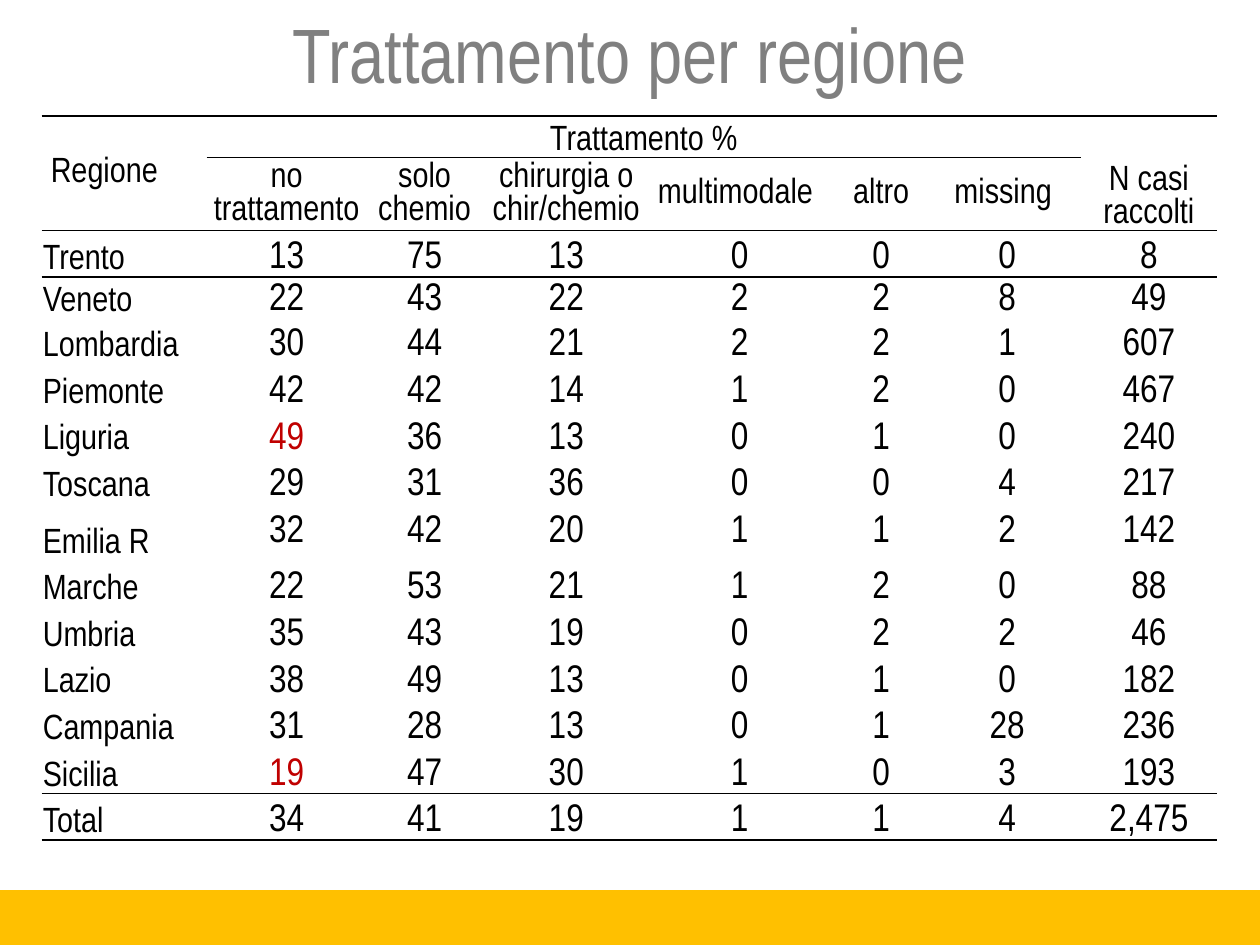
from lxml.etree import SubElement
from pptx import Presentation
from pptx.dml.color import RGBColor
from pptx.enum.shapes import MSO_SHAPE
from pptx.enum.text import MSO_ANCHOR, PP_ALIGN
from pptx.oxml.ns import qn
from pptx.util import Inches, Pt

TITLE = "Trattamento per regione"
GROUPS = {0: "\N{NO-BREAK SPACE}Regione", 1: "Trattamento %", 7: "N casi raccolti"}
HEADS = ["no trattamento", "solo chemio", "chirurgia o chir/chemio",
         "multimodale ", "altro", "missing "]
ROWS = [
    ("Trento", 13, 75, 13, 0, 0, 0, 8),
    ("Veneto", 22, 43, 22, 2, 2, 8, 49),
    ("Lombardia", 30, 44, 21, 2, 2, 1, 607),
    ("Piemonte", 42, 42, 14, 1, 2, 0, 467),
    ("Liguria", 49, 36, 13, 0, 1, 0, 240),
    ("Toscana", 29, 31, 36, 0, 0, 4, 217),
    ("Emilia R", 32, 42, 20, 1, 1, 2, 142),
    ("Marche", 22, 53, 21, 1, 2, 0, 88),
    ("Umbria", 35, 43, 19, 0, 2, 2, 46),
    ("Lazio", 38, 49, 13, 0, 1, 0, 182),
    ("Campania", 31, 28, 13, 0, 1, 28, 236),
    ("Sicilia", 19, 47, 30, 1, 0, 3, 193),
    ("Total", 34, 41, 19, 1, 1, 4, 2475),
]
MARKED = {("Liguria", 1), ("Sicilia", 1)}
WIDTHS = [1.31, 1.27, 0.92, 1.33, 1.42, 0.83, 1.17, 1.08]
HEIGHTS = [0.33, 0.58, 0.37, 0.33, 0.36] + [0.37] * 3 + [0.45] + [0.37] * 6
RULES = {0: "TB", 1: "B", 2: "T", 13: "B", 14: "TB"}
MERGES = [((0, 0), (1, 0)), ((0, 1), (0, 6)), ((0, 7), (1, 7))]
COLORS = {"ink": "000000", "title": "808080", "mark": "C00000", "band": "FFC000"}
MARGINS = {"margin_left": 0.01, "margin_right": 0.01,
           "margin_top": 0.01, "margin_bottom": 0}
FONT = "Arial Narrow"
NO_STYLE = "{2D5ABB26-0587-4C30-8999-92F81FD0307C}"


def color(name):
    return RGBColor.from_string(COLORS[name])


def write(frame, text, size, ink="ink", align=PP_ALIGN.CENTER):
    para = frame.paragraphs[0]
    para.alignment = align
    run = para.add_run()
    run.text = text
    for key, value in {"name": FONT, "size": Pt(size), "bold": False}.items():
        setattr(run.font, key, value)
    run.font.color.rgb = color(ink)


def rule(cell, side):
    """Draw a 1 pt border on the top (T) or bottom (B) of a cell."""
    line = SubElement(cell._tc.get_or_add_tcPr(), qn(f"a:ln{side}"), w=str(Pt(1)))
    fill = SubElement(line, qn("a:solidFill"))
    SubElement(fill, qn("a:srgbClr"), val=COLORS["ink"])


def add_title(slide):
    title = slide.shapes.title
    place = {"left": 0.5, "top": 0, "width": 9, "height": 0.83}
    for key, value in place.items():
        setattr(title, key, Inches(value))
    title.text_frame.vertical_anchor = MSO_ANCHOR.MIDDLE
    write(title.text_frame, TITLE, 44, "title")


def add_grid(slide):
    frame = slide.shapes.add_table(len(HEIGHTS), len(WIDTHS), Inches(0.33), Inches(0.92),
                                   Inches(sum(WIDTHS)), Inches(sum(HEIGHTS)))
    table = frame.table
    table.first_row = table.horz_banding = False
    table._tbl.tblPr.find(qn("a:tableStyleId")).text = NO_STYLE
    for col, width in zip(table.columns, WIDTHS):
        col.width = Inches(width)
    for row, height in zip(table.rows, HEIGHTS):
        row.height = Inches(height)

    for r, row in enumerate(table.rows):
        for cell in row.cells:
            for side in RULES.get(r, ""):
                rule(cell, side)
            cell.fill.background()
            cell.vertical_anchor = MSO_ANCHOR.BOTTOM
            for key, value in MARGINS.items():
                setattr(cell, key, Inches(value))
    for start, end in MERGES:
        table.cell(*start).merge(table.cell(*end))

    for c, text in GROUPS.items():
        align = PP_ALIGN.CENTER if c else PP_ALIGN.LEFT
        write(table.cell(0, c).text_frame, text, 20, align=align)
    table.cell(0, 0).vertical_anchor = MSO_ANCHOR.MIDDLE
    for c, text in enumerate(HEADS, 1):
        cell = table.cell(1, c)
        cell.vertical_anchor = MSO_ANCHOR.MIDDLE
        write(cell.text_frame, text, 20)

    for r, (region, *values) in enumerate(ROWS, 2):
        write(table.cell(r, 0).text_frame, region, 20, align=PP_ALIGN.LEFT)
        for c, value in enumerate(values, 1):
            cell = table.cell(r, c)
            if region == "Emilia R":
                cell.vertical_anchor = MSO_ANCHOR.MIDDLE
            ink = "mark" if (region, c) in MARKED else "ink"
            write(cell.text_frame, f"{value:,}", 22, ink)


def add_band(slide):
    band = slide.shapes.add_shape(MSO_SHAPE.RECTANGLE, 0, Inches(7.08),
                                  Inches(10), Inches(0.42))
    band.shadow.inherit = False
    band.fill.solid()
    band.fill.fore_color.rgb = band.line.color.rgb = color("band")
    band.line.width = Pt(2)


def main():
    deck = Presentation()
    deck.slide_width, deck.slide_height = Inches(10), Inches(7.5)
    slide = deck.slides.add_slide(deck.slide_layouts[5])
    add_title(slide)
    add_grid(slide)
    add_band(slide)
    deck.save("out.pptx")


if __name__ == "__main__":
    main()
